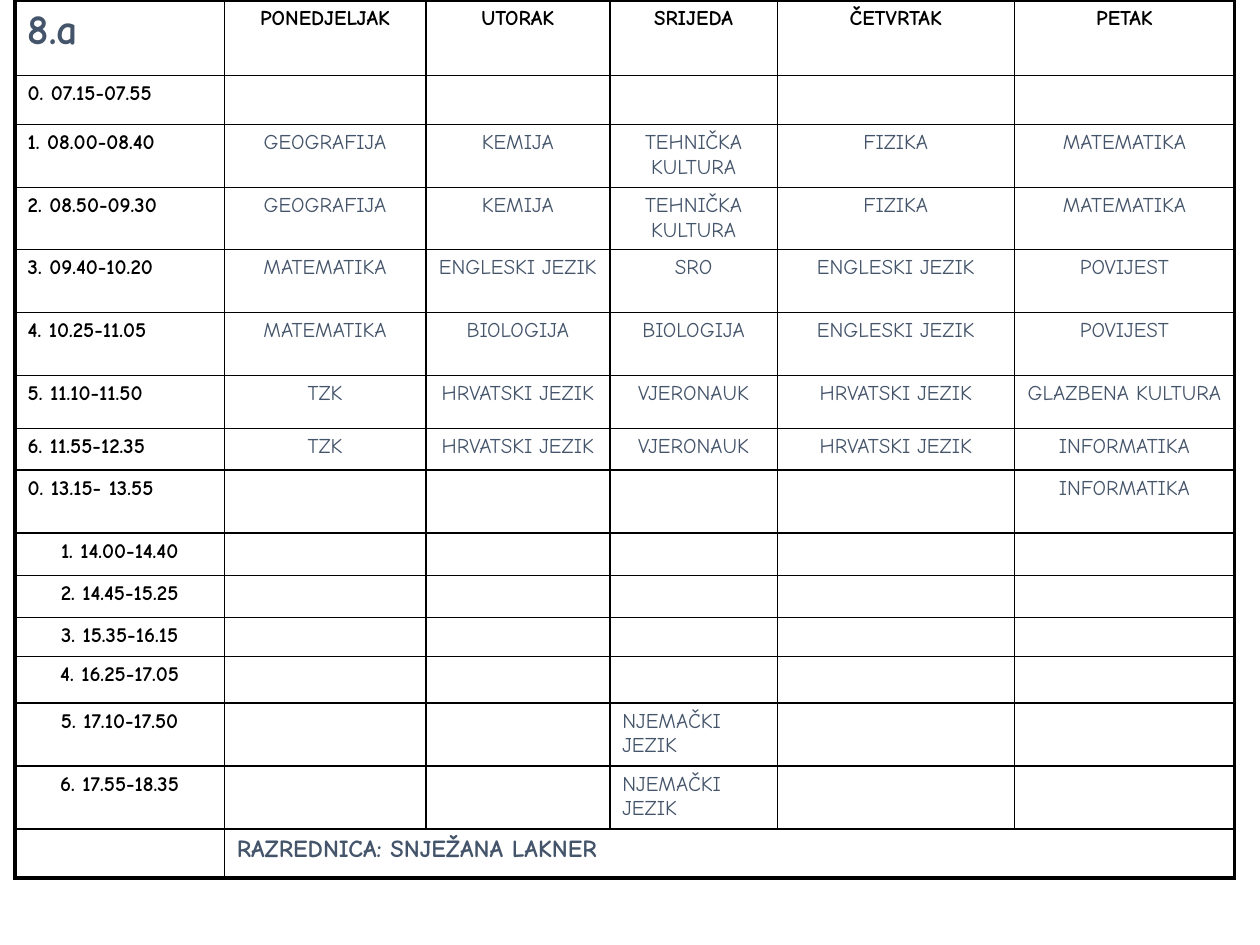
"""Builds the weekly timetable slide of class 8.a."""
from lxml import etree
from pptx import Presentation
from pptx import util as u
from pptx.dml.color import RGBColor
from pptx.enum import text
from pptx.oxml.ns import qn

BLACK = RGBColor(0x00, 0x00, 0x00)
SLATE = RGBColor(0x44, 0x54, 0x6A)
LEFT, CENTER = text.PP_ALIGN.LEFT, text.PP_ALIGN.CENTER

COLUMN_WIDTHS = [1.66, 1.6, 1.46, 1.33, 1.88, 1.75]
ROW_HEIGHTS = [0.6, 0.39, 0.5, 0.49, 0.5, 0.5, 0.42, 0.33,
               0.5, 0.34, 0.33, 0.31, 0.37, 0.5, 0.5, 0.39]
DAYS = ["PONEDJELJAK", "UTORAK", "SRIJEDA", "ČETVRTAK", "PETAK"]
FREE = [""] * 5
SCIENCE = ["GEOGRAFIJA", "KEMIJA", "TEHNIČKA KULTURA", "FIZIKA", "MATEMATIKA"]
LANGUAGE = ["TZK", "HRVATSKI JEZIK", "VJERONAUK", "HRVATSKI JEZIK"]
GERMAN = ["", "", "NJEMAČKI JEZIK", "", ""]
MORNING = [
    ("0. 07.15-07.55", FREE),
    ("1. 08.00-08.40", SCIENCE),
    ("2. 08.50-09.30", SCIENCE),
    ("3. 09.40-10.20", ["MATEMATIKA", "ENGLESKI JEZIK", "SRO", "ENGLESKI JEZIK", "POVIJEST"]),
    ("4. 10.25-11.05", ["MATEMATIKA", "BIOLOGIJA", "BIOLOGIJA", "ENGLESKI JEZIK", "POVIJEST"]),
    ("5. 11.10-11.50", LANGUAGE + ["GLAZBENA KULTURA"]),
    ("6. 11.55-12.35", LANGUAGE + ["INFORMATIKA"]),
    ("0. 13.15- 13.55", ["", "", "", "", "INFORMATIKA"]),
]
AFTERNOON = [
    ("1. 14.00-14.40", FREE),
    ("2. 14.45-15.25", FREE),
    ("3. 15.35-16.15", FREE),
    ("4. 16.25-17.05", FREE),
    ("5. 17.10-17.50", GERMAN),
    ("6. 17.55-18.35", GERMAN),
]


class TimetableSlide:
    """Holds the style and the current slide."""

    font_name = "Comic Neue"
    text_size = 12
    thin, thick = 1, 2.25

    def __init__(self, presentation):
        self.slide = presentation.slides.add_slide(presentation.slide_layouts[6])

    def add_grid(self, left, top, widths, heights):
        shape = self.slide.shapes.add_table(
            len(heights), len(widths), u.Inches(left), u.Inches(top),
            u.Inches(sum(widths)), u.Inches(sum(heights)))
        self.table = shape.table
        self.table.first_row = self.table.horz_banding = False
        for column, width in zip(self.table.columns, widths):
            column.width = u.Inches(width)
        for row, height in zip(self.table.rows, heights):
            row.height = u.Inches(height)

    def merge_cells(self, row, first, last):
        self.table.cell(row, first).merge(self.table.cell(row, last))

    def fill_cell(self, row, column, words, align=LEFT, **changes):
        paragraph = self.table.cell(row, column).text_frame.paragraphs[0]
        paragraph.alignment = align
        if not words:
            etree.SubElement(paragraph._p, qn("a:endParaRPr"), sz=str(self.text_size * 100))
            return
        run = paragraph.add_run()
        run.text = words
        style = {"name": self.font_name, "size": self.text_size, "bold": True} | changes
        run.font.color.rgb = style.pop("color", BLACK)
        style["size"] = u.Pt(style["size"])
        for name, value in style.items():
            setattr(run.font, name, value)

    def add_borders(self):
        last_row, last_column = len(self.table.rows) - 1, len(self.table.columns) - 1
        for row in range(last_row + 1):
            for column in range(last_column + 1):
                cell = self.table.cell(row, column)
                end = column + (cell.span_width if cell.is_merge_origin else 1) - 1
                outer = {"L": column == 0, "R": end == last_column,
                         "T": row == 0, "B": row == last_row}
                properties = cell._tc.get_or_add_tcPr()
                for side, is_outer in outer.items():
                    width = u.Pt(self.thick if is_outer else self.thin)
                    line = etree.SubElement(properties, qn(f"a:ln{side}"), w=str(width))
                    fill = etree.SubElement(line, qn("a:solidFill"))
                    etree.SubElement(fill, qn("a:srgbClr"), val=str(BLACK))
                cell.fill.background()


def main():
    presentation = Presentation()
    presentation.slide_width, presentation.slide_height = u.Inches(10), u.Inches(7.5)
    timetable = TimetableSlide(presentation)
    timetable.add_grid(0.12, 0, COLUMN_WIDTHS, ROW_HEIGHTS)

    timetable.fill_cell(0, 0, "8.a", size=24, color=SLATE)
    for column, day in enumerate(DAYS, 1):
        timetable.fill_cell(0, column, day, CENTER)

    for row, (hours, subjects) in enumerate(MORNING + AFTERNOON, 1):
        is_morning = row <= len(MORNING)
        timetable.fill_cell(row, 0, hours, LEFT if is_morning else CENTER)
        for column, subject in enumerate(subjects, 1):
            align = CENTER if is_morning else LEFT
            timetable.fill_cell(row, column, subject, align, color=SLATE, bold=False)

    footer = len(ROW_HEIGHTS) - 1
    timetable.merge_cells(footer, 1, len(DAYS))
    timetable.fill_cell(footer, 0, "")
    timetable.fill_cell(footer, 1, "RAZREDNICA: SNJEŽANA LAKNER", size=14, color=SLATE)
    timetable.add_borders()
    presentation.save("out.pptx")


if __name__ == "__main__":
    main()
